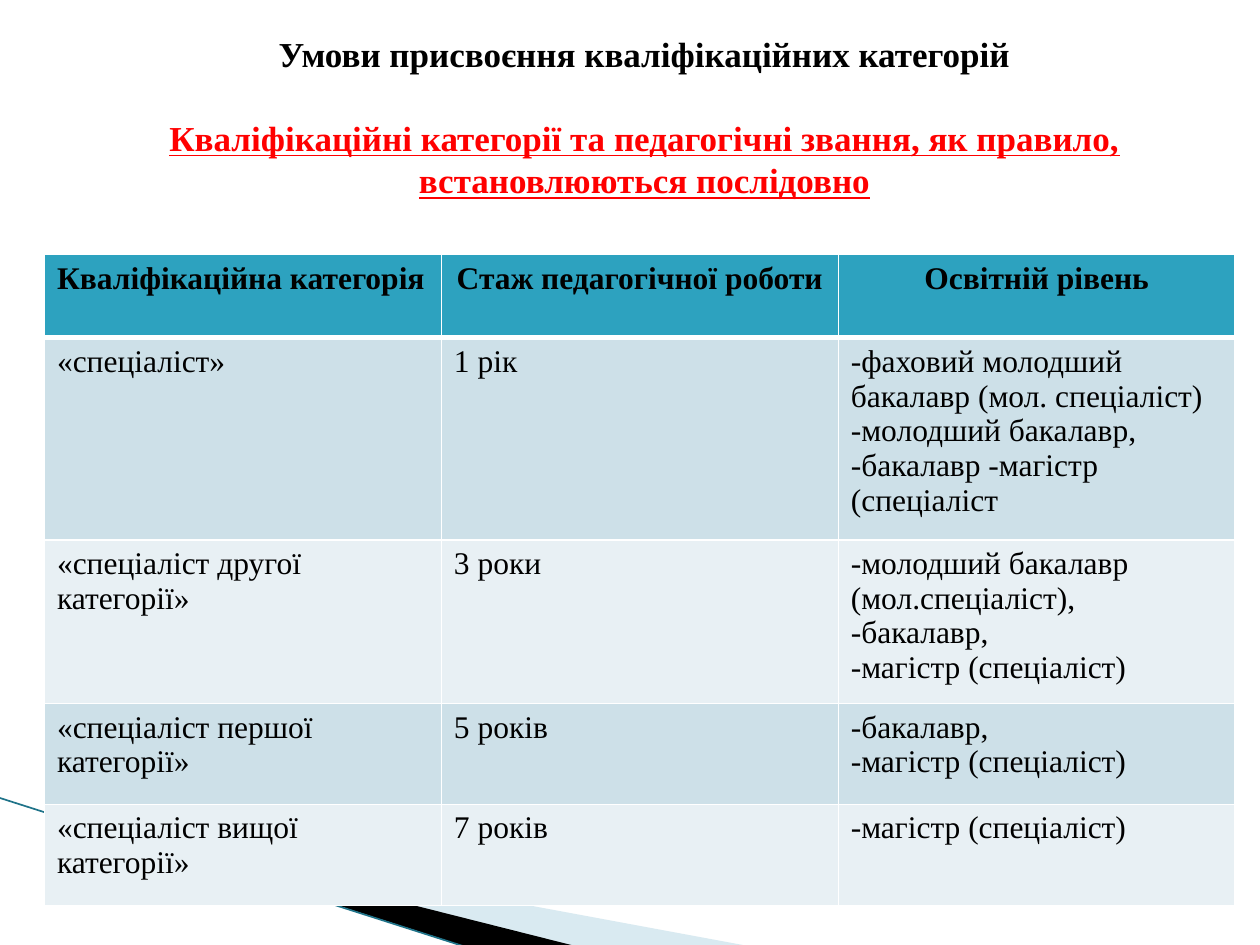
from lxml.etree import SubElement
from pptx import Presentation
from pptx.dml.color import RGBColor
from pptx.enum.shapes import MSO_CONNECTOR
from pptx.enum.text import PP_ALIGN
from pptx.oxml.ns import qn
from pptx.util import Pt

FONT = "Times New Roman"
COLORS = {
    "text": "000000", "accent": "FF0000", "border": "FFFFFF",
    "header": "2DA2BF", "odd": "CDE0E8", "even": "E8F0F4",
    "pale": "A0CBDC", "band": "000000", "edge": "1F7389",
}
TITLE = "Умови присвоєння кваліфікаційних категорій"
SUBTITLE = ("Кваліфікаційні категорії та педагогічні звання, як правило, "
            "встановлюються послідовно")
HEADERS = ["Кваліфікаційна категорія", "Стаж педагогічної роботи", "Освітній рівень"]
CATEGORIES = [
    ("«спеціаліст»", "1 рік",
     ["-фаховий молодший бакалавр (мол. спеціаліст)",
      "-молодший бакалавр, -бакалавр -магістр (спеціаліст"]),
    ("«спеціаліст другої категорії»", "3 роки",
     ["-молодший бакалавр (мол.спеціаліст),", "-бакалавр,", "-магістр (спеціаліст)"]),
    ("«спеціаліст першої категорії»", "5 років",
     ["-бакалавр,", "-магістр (спеціаліст)"]),
    ("«спеціаліст вищої категорії»", "7 років", ["-магістр (спеціаліст)"]),
]
ROW_HEIGHTS = [47.5, 115.5, 93, 57.6, 57.6]
COLUMN_WIDTH = 226.8
TABLE_LEFT, TABLE_TOP = 25.4, 145.5
# Corner points and transparency-adjusted opacity of the corner bands
BANDS = [
    ("pale", 40, [(39.6, 468.7), (428.4, 540.7), (328.3, 540.7), (39.6, 468)]),
    ("band", 100, [(38.2, 467.3), (329, 540.7), (267.8, 541.4), (38.9, 468)]),
]
EDGE = (-0.7, 455.8, 267.1, 541.4)


def color(name):
    return RGBColor.from_string(COLORS[name])


def add_run(paragraph, text, size, color_name="text", bold=False, underline=False):
    run = paragraph.add_run()
    run.text = text
    font = run.font
    font.name, font.size, font.bold = FONT, Pt(size), bold
    if underline:
        font.underline = True
    font.color.rgb = color(color_name)


def add_band(slide, color_name, opacity, points):
    builder = slide.shapes.build_freeform(Pt(points[0][0]), Pt(points[0][1]))
    builder.add_line_segments([(Pt(x), Pt(y)) for x, y in points[1:]])
    shape = builder.convert_to_shape()
    shape.shadow.inherit = False
    shape.fill.solid()
    shape.fill.fore_color.rgb = color(color_name)
    shape.line.fill.background()
    if opacity < 100:
        fill_color = shape.fill._xPr.find(qn("a:solidFill"))[0]
        SubElement(fill_color, qn("a:alpha"), val=str(opacity * 1000))


def add_edge(slide):
    line = slide.shapes.add_connector(MSO_CONNECTOR.STRAIGHT, *map(Pt, EDGE))
    line.line.color.rgb = color("edge")
    line.line.width = Pt(0.95)
    SubElement(line._element.spPr, qn("a:effectLst"))


def add_heading(slide):
    box = slide.shapes.add_textbox(Pt(36.7), Pt(15.1), Pt(663.1), Pt(516.2))
    frame = box.text_frame
    frame.word_wrap = True
    title, subtitle = frame.paragraphs[0], frame.add_paragraph()
    for paragraph in (title, subtitle):
        paragraph.alignment = PP_ALIGN.CENTER
        paragraph.line_spacing = Pt(24)
    subtitle.space_before = Pt(24)
    add_run(title, TITLE, 20, bold=True)
    add_run(subtitle, SUBTITLE, 20, "accent", bold=True, underline=True)


def set_borders(cell, widths):
    properties = cell._tc.get_or_add_tcPr()
    for side, width in widths.items():
        line = SubElement(properties, qn(f"a:ln{side}"), w=str(Pt(width)))
        fill = SubElement(line, qn("a:solidFill"))
        SubElement(fill, qn("a:srgbClr"), val=COLORS["border"])


def add_category_table(slide):
    rows = [HEADERS, *CATEGORIES]
    table = slide.shapes.add_table(
        len(rows), len(HEADERS), Pt(TABLE_LEFT), Pt(TABLE_TOP),
        Pt(COLUMN_WIDTH * len(HEADERS)), Pt(sum(ROW_HEIGHTS))).table
    for column in table.columns:
        column.width = Pt(COLUMN_WIDTH)
    for row_index, row in enumerate(rows):
        table.rows[row_index].height = Pt(ROW_HEIGHTS[row_index])
        is_header = row_index == 0
        fill_name = "header" if is_header else ("even", "odd")[row_index % 2]
        borders = {"L": 1, "R": 1, "T": 3 if row_index == 1 else 1,
                   "B": 3 if is_header else 1}
        for column_index, content in enumerate(row):
            cell = table.cell(row_index, column_index)
            set_borders(cell, borders)
            cell.fill.solid()
            cell.fill.fore_color.rgb = color(fill_name)
            lines = [content] if isinstance(content, str) else content
            for line_index, text in enumerate(lines):
                frame = cell.text_frame
                paragraph = frame.add_paragraph() if line_index else frame.paragraphs[0]
                if is_header and column_index:
                    paragraph.alignment = PP_ALIGN.CENTER
                add_run(paragraph, text, 18, bold=is_header)


def main():
    presentation = Presentation()
    presentation.slide_width, presentation.slide_height = Pt(720), Pt(540)
    slide = presentation.slides.add_slide(presentation.slide_layouts[6])
    for band in BANDS:
        add_band(slide, *band)
    add_edge(slide)
    add_heading(slide)
    add_category_table(slide)
    presentation.save("out.pptx")


if __name__ == "__main__":
    main()
